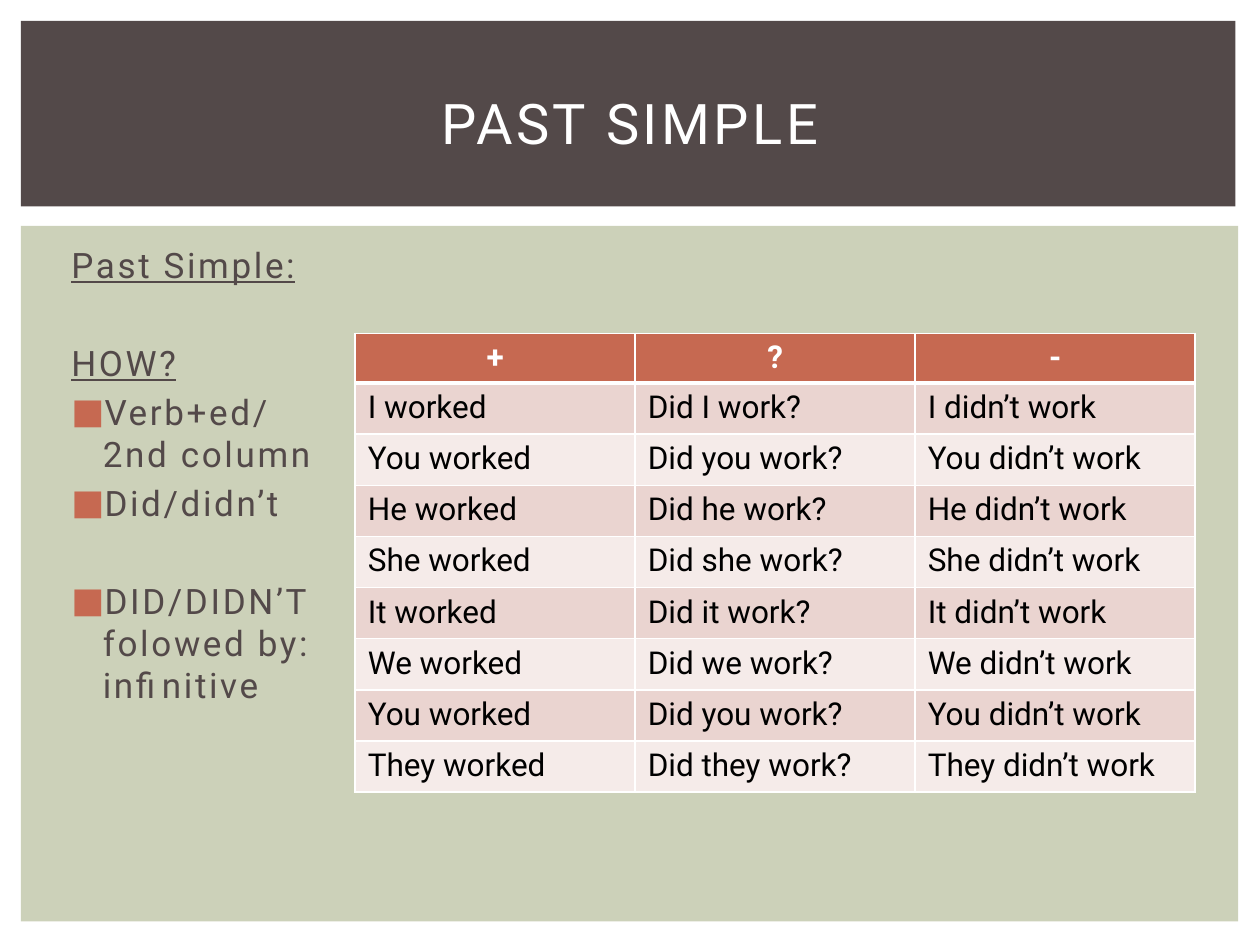
from dataclasses import dataclass

from lxml.etree import SubElement
from pptx import Presentation
from pptx.dml.color import RGBColor as Rgb
from pptx.enum.shapes import MSO_SHAPE as Preset
from pptx.enum.text import MSO_ANCHOR as Anchor, MSO_AUTO_SIZE as AutoSize, PP_ALIGN as Align
from pptx.oxml.ns import qn
from pptx.util import Pt


@dataclass(frozen=True)
class Theme:
    font: str = "Roboto"
    dark: str = "534949"
    sage: str = "CCD1B9"
    accent: str = "C66951"
    white: str = "FFFFFF"
    black: str = "000000"
    bands: tuple = ("EAD4D0", "F5EBE9")
    title_size: float = 32
    body_size: float = 20
    table_size: float = 18


@dataclass(frozen=True)
class Frame:
    left: float
    top: float
    width: float
    height: float

    def lengths(self) -> tuple:
        return Pt(self.left), Pt(self.top), Pt(self.width), Pt(self.height)


@dataclass(frozen=True)
class Note:
    text: str
    heading: bool = False
    before: float = 4


THEME = Theme()
GAP = 32  # space before a new group of notes

NOTES = [
    Note("Past Simple:", heading=True),
    Note("HOW?", heading=True, before=GAP),
    Note("Verb+ed/\n2nd column"),
    Note("Did/didn’t"),
    Note("DID/DIDN’T\nfolowed by:\ninfinitive", before=GAP),
]
PRONOUNS = ["I", "You", "He", "She", "It", "We", "You", "They"]


def style_runs(para, size: float, color: str, spacing: float = 0,
               bold: bool = False, underline: bool = False) -> None:
    for span in para.runs:
        font = span.font
        font.name, font.size = THEME.font, Pt(size)
        font.bold, font.underline = bold, underline
        font.color.rgb = Rgb.from_string(color)
        if spacing:
            span._r.get_or_add_rPr().set("spc", str(int(spacing * 100)))


def add_panel(page, frame: Frame, color: str, depth: int) -> None:
    """Add a plain rectangle behind the placeholders."""
    panel = page.shapes.add_shape(Preset.RECTANGLE, *frame.lengths())
    panel.shadow.inherit = False
    panel.fill.solid()
    panel.fill.fore_color.rgb = Rgb.from_string(color)
    panel.line.fill.background()
    page.shapes._spTree.insert(2 + depth, panel._element)


def place(box, frame: Frame) -> None:
    box.left, box.top, box.width, box.height = frame.lengths()
    box.text_frame.word_wrap = True
    box.text_frame.auto_size = AutoSize.NONE


def set_bullet(para, shown: bool) -> None:
    props = para._p.get_or_add_pPr()
    margin, indent = (21.6, -18) if shown else (3.6, 0)
    props.set("marL", str(Pt(margin)))
    props.set("indent", str(Pt(indent)))
    if not shown:
        SubElement(props, qn("a:buNone"))
        return
    color = SubElement(props, qn("a:buClr"))
    SubElement(color, qn("a:srgbClr"), val=THEME.accent)
    SubElement(props, qn("a:buFont"), typeface=THEME.font)
    SubElement(props, qn("a:buChar"), char="■")


def fill_notes(box, notes: list[Note]) -> None:
    frame = box.text_frame
    frame.vertical_anchor = Anchor.TOP
    for index, note in enumerate(notes):
        para = frame.add_paragraph() if index else frame.paragraphs[0]
        para.text = note.text
        para.alignment = Align.LEFT
        para.space_before = Pt(note.before)
        set_bullet(para, not note.heading)
        style_runs(para, THEME.body_size, THEME.dark, 1.5, underline=note.heading)


def set_borders(cell, top: float, bottom: float) -> None:
    props = cell._tc.get_or_add_tcPr()
    for side, width in (("L", 1), ("R", 1), ("T", top), ("B", bottom)):
        line = SubElement(props, qn(f"a:ln{side}"), w=str(Pt(width)))
        fill = SubElement(line, qn("a:solidFill"))
        SubElement(fill, qn("a:srgbClr"), val=THEME.white)


def conjugate(pronoun: str) -> list[str]:
    subject = pronoun if pronoun == "I" else pronoun.lower()
    return [f"{pronoun} worked", f"Did {subject} work?", f"{pronoun} didn’t work"]


def add_forms_table(page, frame: Frame, header_height: float) -> None:
    rows = [["+", "?", "-"]] + [conjugate(pronoun) for pronoun in PRONOUNS]
    table = page.shapes.add_table(len(rows), 3, *frame.lengths()).table
    row_height = (frame.height - header_height) / len(PRONOUNS)
    for column in table.columns:
        column.width = Pt(frame.width / 3)
    for r, texts in enumerate(rows):
        header = r == 0
        table.rows[r].height = Pt(header_height if header else row_height)
        for c, text in enumerate(texts):
            cell = table.cell(r, c)
            set_borders(cell, top=3 if r == 1 else 1, bottom=3 if header else 1)
            cell.fill.solid()
            color = THEME.accent if header else THEME.bands[(r - 1) % 2]
            cell.fill.fore_color.rgb = Rgb.from_string(color)
            cell.text_frame.text = text
            para = cell.text_frame.paragraphs[0]
            para.alignment = Align.CENTER if header else Align.LEFT
            style_runs(para, THEME.table_size,
                       THEME.white if header else THEME.black, bold=header)


def main() -> None:
    deck = Presentation()
    deck.slide_width, deck.slide_height = Pt(720), Pt(540)
    page = deck.slides.add_slide(deck.slide_layouts[1])

    # Background panels
    add_panel(page, Frame(12, 129, 695.5, 397.5), THEME.sage, depth=0)
    add_panel(page, Frame(12, 12, 694, 106), THEME.dark, depth=1)

    # Title
    title = page.shapes.title
    place(title, Frame(30, 28, 660, 83))
    title.text_frame.text = "PAST SIMPLE"
    title.text_frame.vertical_anchor = Anchor.MIDDLE
    heading = title.text_frame.paragraphs[0]
    heading.alignment = Align.CENTER
    style_runs(heading, THEME.title_size, THEME.white, 2)

    # Notes on how the tense is formed
    body = page.placeholders[1]
    place(body, Frame(30, 135.5, 662, 347))
    fill_notes(body, NOTES)

    # Affirmative, question and negative forms
    add_forms_table(page, Frame(203, 190.5, 480, 262.4), header_height=28.4)

    deck.save("out.pptx")


if __name__ == "__main__":
    main()
